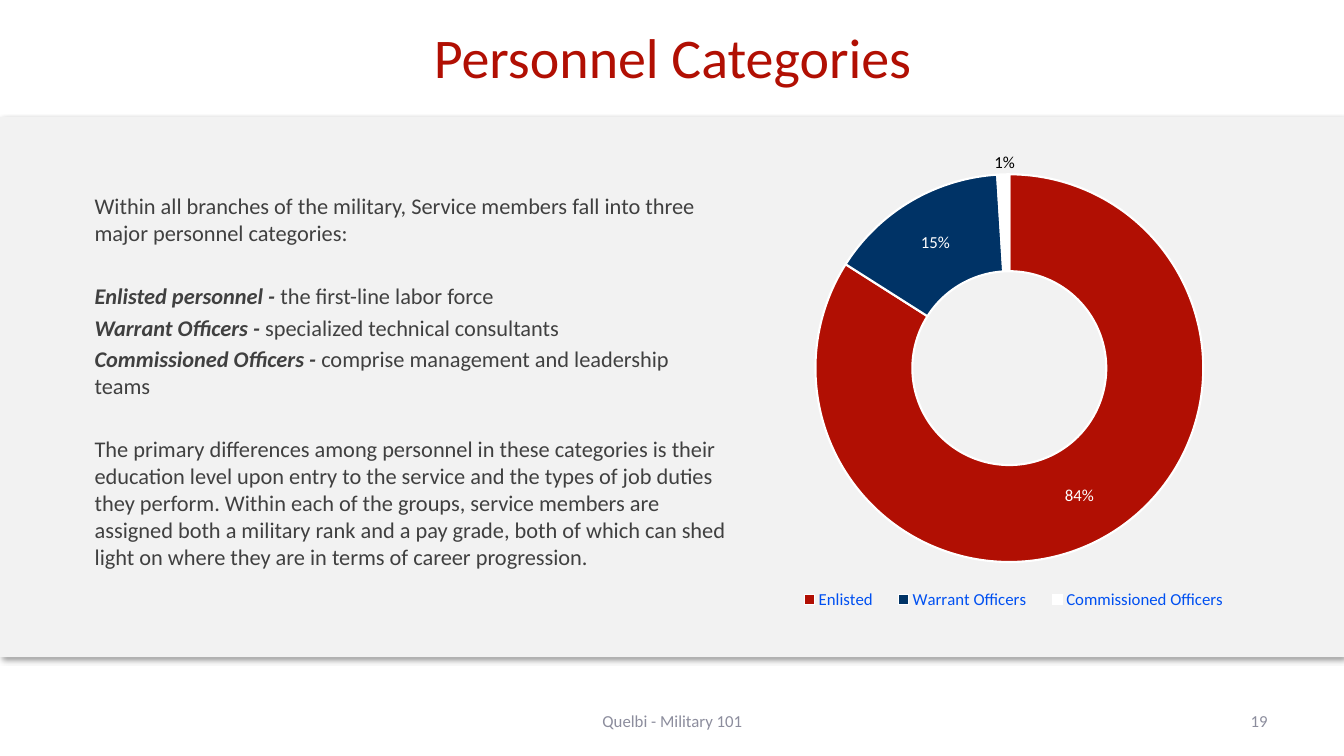
import pptx
import pptx.chart.data
import pptx.dml.color
import pptx.enum.chart
import pptx.enum.shapes
import pptx.enum.text
import pptx.oxml
import pptx.oxml.ns
import pptx.util
from pptx.util import Inches

ALIGN = pptx.enum.text.PP_ALIGN
ANCHOR = pptx.enum.text.MSO_ANCHOR
RED, NAVY, WHITE, BLACK = "B10F03", "003366", "FFFFFF", "000000"
BODY, FOOTER, LEGEND, BAND = "404040", "8C8D9D", "0050F1", "F2F2F2"


def color(value):
    return pptx.dml.color.RGBColor.from_string(value)


def xml(tag, content="", attributes=""):
    prefix = tag.split(":")[0]
    namespaces = pptx.oxml.ns.nsdecls(*dict.fromkeys((prefix, "a")))
    return pptx.oxml.parse_xml(f"<{tag} {namespaces} {attributes}>{content}</{tag}>")


def manual_layout(*settings):
    content = "".join(f'<c:{name} val="{value}"/>' for name, value in settings)
    return xml("c:layout", f"<c:manualLayout>{content}</c:manualLayout>")


def edge_layout(x, y, width, height):
    return (("xMode", "edge"), ("yMode", "edge"),
            ("x", x), ("y", y), ("w", width), ("h", height))


class SlideBuilder:
    font = "Calibri"

    def __init__(self, deck):
        self.page = deck.slides.add_slide(deck.slide_layouts[5])

    def style(self, font, size, value, bold=False, italic=False):
        font.name, font.size = self.font, pptx.util.Pt(size)
        font.bold, font.italic = bold, italic
        font.color.rgb = color(value)

    def title(self, text, left, top, width, height):
        box = self.page.shapes.title
        box.left, box.top, box.width, box.height = map(Inches, (left, top, width, height))
        frame = box.text_frame
        frame.text = text
        frame.auto_size = pptx.enum.text.MSO_AUTO_SIZE.NONE
        frame.vertical_anchor = ANCHOR.BOTTOM
        frame.margin_left = frame.margin_right = frame.margin_bottom = 0
        frame.paragraphs[0].alignment = ALIGN.CENTER
        self.style(frame.paragraphs[0].runs[0].font, 40, RED)

    def band(self, left, top, width, height):
        shape = self.page.shapes.add_shape(
            pptx.enum.shapes.MSO_SHAPE.RECTANGLE, *map(Inches, (left, top, width, height)))
        shape.fill.solid()
        shape.fill.fore_color.rgb = color(BAND)
        shape.line.fill.background()
        shape.shadow.inherit = False
        effects = shape._element.spPr.find(pptx.oxml.ns.qn("a:effectLst"))
        effects.append(xml(
            "a:outerShdw", '<a:srgbClr val="000000"><a:alpha val="40000"/></a:srgbClr>',
            'blurRad="50800" dist="38100" dir="2700000" algn="tl" rotWithShape="0"'))

    def text(self, paragraphs, left, top, width, height, size, value,
             align=ALIGN.LEFT, anchor=ANCHOR.TOP):
        """Each paragraph is (space before, emphasised lead, plain text)."""
        box = self.page.shapes.add_textbox(*map(Inches, (left, top, width, height)))
        frame = box.text_frame
        frame.word_wrap = True
        frame.vertical_anchor = anchor
        for index, (space, lead, plain) in enumerate(paragraphs):
            para = frame.add_paragraph() if index else frame.paragraphs[0]
            para.alignment = align
            para.space_before = pptx.util.Pt(space)
            for words, strong in ((lead, True), (plain, False)):
                if words:
                    span = para.add_run()
                    span.text = words
                    self.style(span.font, size, value, strong, strong)

    def doughnut(self, slices, left, top, width, height):
        data = pptx.chart.data.CategoryChartData()
        data.categories = [name for name, _, _ in slices]
        data.add_series("Series 1", [share for _, share, _ in slices])
        chart = self.page.shapes.add_chart(
            pptx.enum.chart.XL_CHART_TYPE.DOUGHNUT,
            *map(Inches, (left, top, width, height)), data).chart
        chart.has_title = False
        self.style(chart.font, 10, "002060")
        plot = chart.plots[0]
        plot.vary_by_categories = True
        plot._element.find(pptx.oxml.ns.qn("c:holeSize")).set("val", "75")
        series = plot.series[0]
        for index, (_, _, value) in enumerate(slices):
            point = series.points[index].format
            point.fill.solid()
            point.fill.fore_color.rgb = color(value)
            point.line.color.rgb = color(WHITE)
            point.line.width = pptx.util.Pt(1.5)

        # Percent labels, the smallest one lifted above its slice
        labels = series.data_labels
        labels.show_percentage, labels.show_value = True, False
        labels.number_format, labels.number_format_is_linked = "0%", False
        self.style(labels.font, 12, WHITE)
        last = len(slices) - 1
        self.style(series.points[last].data_label.font, 12, BLACK)
        label = labels._element.find(pptx.oxml.ns.qn("c:dLbl"))
        label.find(pptx.oxml.ns.qn("c:showVal")).set("val", "0")
        label.find(pptx.oxml.ns.qn("c:showPercent")).set("val", "1")
        label.insert(1, manual_layout(("x", 0), ("y", -0.11)))

        # Legend and plot area
        chart.has_legend = True
        legend = chart.legend
        legend.position = pptx.enum.chart.XL_LEGEND_POSITION.BOTTOM
        legend.include_in_layout = False
        self.style(legend.font, 12, LEGEND)
        areas = (
            (legend._element, edge_layout(0.38, 0.91, 0.56, 0.06), 1),
            (chart._chartSpace.chart.plotArea,
             (("layoutTarget", "inner"),) + edge_layout(0.416, 0.156, 0.477, 0.715), 0))
        for area, settings, position in areas:
            for old in area.findall(pptx.oxml.ns.qn("c:layout")):
                area.remove(old)
            area.insert(position, manual_layout(*settings))


def main():
    deck = pptx.Presentation()
    deck.slide_width, deck.slide_height = Inches(13.33), Inches(7.5)
    slide = SlideBuilder(deck)

    # Heading and background band
    slide.title("Personnel Categories", 4.2, 0.34, 4.94, 0.55)
    slide.band(0, 1.16, 13.33, 5.36)

    # Explanation
    close, wide = 3.2, 26
    slide.text([
        (close, "", "Within all branches of the military, Service members fall into "
                    "three major personnel categories:"),
        (wide, "Enlisted personnel - ", "the first-line labor force"),
        (close, "Warrant Officers - ", "specialized technical consultants"),
        (close, "Commissioned Officers - ", "comprise management and leadership teams"),
        (wide, "", "The primary differences among personnel in these categories is their "
                   "education level upon entry to the service and the types of job duties "
                   "they perform. Within each of the groups, service members are assigned "
                   "both a military rank and a pay grade, both of which can shed light on "
                   "where they are in terms of career progression."),
    ], 0.84, 1.86, 6.48, 4.23, 16, BODY)

    # Shares of personnel
    slide.doughnut([("Enlisted", 84, RED), ("Warrant Officers", 15, NAVY),
                    ("Commissioned Officers", 1, WHITE)], 4.69, 0.89, 8.13, 5.38)

    # Footer
    for words, left, width, align in (
            ("Quelbi - Military 101", 4.56, 4.22, ALIGN.CENTER),
            ("19", 9.56, 3.11, ALIGN.RIGHT)):
        slide.text([(0, "", words)], left, 6.95, width, 0.4, 12, FOOTER,
                   align, ANCHOR.MIDDLE)

    deck.save("out.pptx")


if __name__ == "__main__":
    main()
